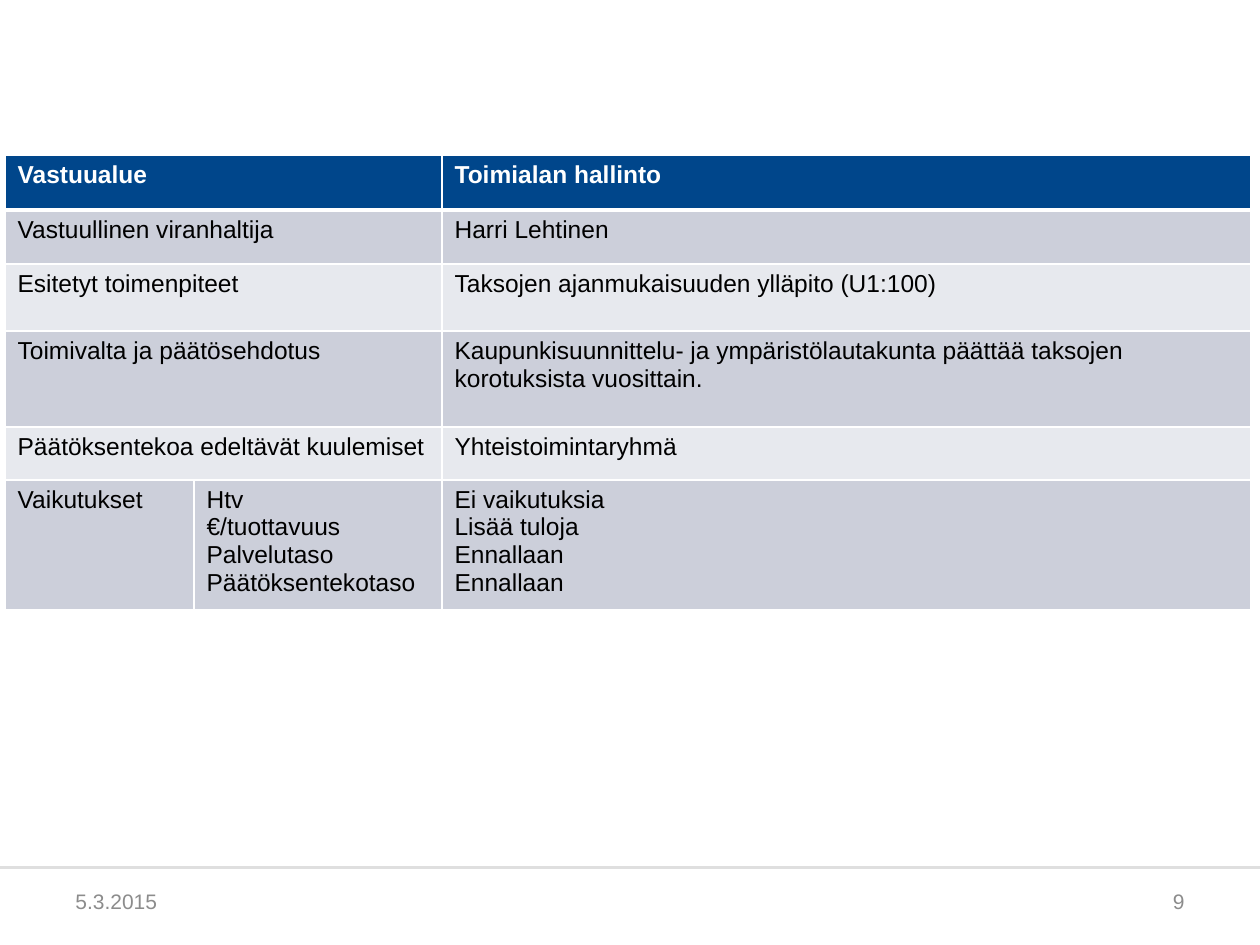
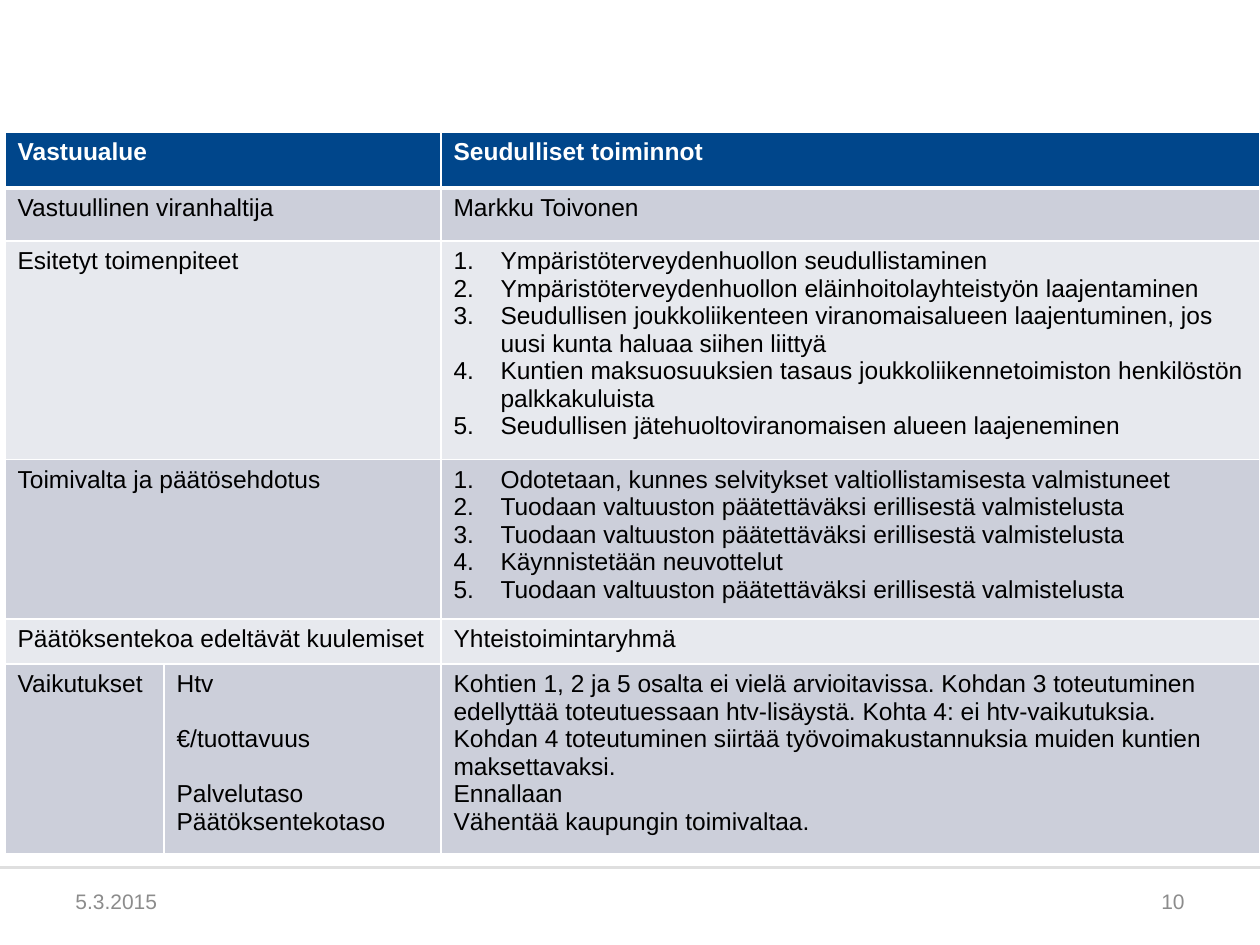
from lxml import etree
from pptx import Presentation
from pptx import util as u
from pptx.dml.color import RGBColor
from pptx.enum import shapes, text
from pptx.oxml import ns

PX = 914400 / 126
FONT = "Arial"
COLORS = {
    "header": "00468B",
    "odd": "CCCFDA",
    "even": "E7E9EE",
    "white": "FFFFFF",
    "black": "000000",
    "rule": "DFDFDF",
    "footer": "8C8C8C",
}
LABELS = [
    "Vastuualue",
    "Vastuullinen viranhaltija",
    "Esitetyt toimenpiteet",
    "Toimivalta ja päätösehdotus",
    "Päätöksentekoa edeltävät kuulemiset",
    "Vaikutukset",
]
EFFECTS = ["Htv", "€/tuottavuus", "Palvelutaso", "Päätöksentekotaso"]
SEPARATE = "Tuodaan valtuuston päätettäväksi erillisestä valmistelusta"
AREAS = [
    {
        "page": "9",
        "box": (5, 155),
        "cols": (189, 248, 809),
        "rows": (55, 54, 67, 96, 53, 122),
        "effect_gaps": (),
        "numbered": (),
        "content": [
            ["Toimialan hallinto"],
            ["Harri Lehtinen"],
            ["Taksojen ajanmukaisuuden ylläpito (U1:100)"],
            ["Kaupunkisuunnittelu- ja ympäristölautakunta päättää taksojen "
             "korotuksista vuosittain."],
            ["Yhteistoimintaryhmä"],
            ["Ei vaikutuksia", "Lisää tuloja", "Ennallaan", "Ennallaan"],
        ],
    },
    {
        "page": "10",
        "box": (5, 132),
        "cols": (159, 277, 819),
        "rows": (56, 53, 205, 151, 45, 177),
        "effect_gaps": (1, 2),
        "numbered": (2, 3),
        "content": [
            ["Seudulliset toiminnot"],
            ["Markku Toivonen"],
            ["Ympäristöterveydenhuollon seudullistaminen",
             "Ympäristöterveydenhuollon eläinhoitolayhteistyön laajentaminen",
             "Seudullisen joukkoliikenteen viranomaisalueen laajentuminen, "
             "jos uusi kunta haluaa siihen liittyä",
             "Kuntien maksuosuuksien tasaus joukkoliikennetoimiston "
             "henkilöstön palkkakuluista",
             "Seudullisen jätehuoltoviranomaisen alueen laajeneminen"],
            ["Odotetaan, kunnes selvitykset valtiollistamisesta valmistuneet",
             SEPARATE, SEPARATE, "Käynnistetään neuvottelut", SEPARATE],
            ["Yhteistoimintaryhmä"],
            ["Kohtien 1, 2 ja 5 osalta ei vielä arvioitavissa. Kohdan 3 "
             "toteutuminen edellyttää toteutuessaan htv-lisäystä. "
             "Kohta 4: ei htv-vaikutuksia.",
             "Kohdan 4 toteutuminen siirtää työvoimakustannuksia muiden "
             "kuntien maksettavaksi.",
             "Ennallaan",
             "Vähentää kaupungin toimivaltaa."],
        ],
    },
]


def px(n):
    return u.Emu(round(n * PX))


def rgb(name):
    return RGBColor.from_string(COLORS[name])


def style(p, size, color, bold=False):
    for r in p.runs:
        r.font.name = FONT
        r.font.size = u.Pt(size)
        r.font.bold = bold
        r.font.color.rgb = rgb(color)


def number(p):
    pPr = p._p.get_or_add_pPr()
    pPr.set("marL", str(px(47)))
    pPr.set("indent", str(-px(47)))
    etree.SubElement(pPr, ns.qn("a:buFont"), typeface="+mj-lt")
    etree.SubElement(pPr, ns.qn("a:buAutoNum"), type="arabicPeriod")


def border(cell, widths):
    tcPr = cell._tc.get_or_add_tcPr()
    for side, width in zip("LRTB", widths):
        ln = etree.SubElement(tcPr, ns.qn("a:ln" + side), w=str(u.Pt(width)))
        fill = etree.SubElement(ln, ns.qn("a:solidFill"))
        etree.SubElement(fill, ns.qn("a:srgbClr"), val=COLORS["white"])


def fill_cell(cell, lines, header, numbered=False, gaps=()):
    tf = cell.text_frame
    tf.text = "\n".join(lines)
    for i, p in enumerate(tf.paragraphs):
        if numbered:
            number(p)
        if i in gaps:
            p.space_before = u.Pt(15.7)
        style(p, 14, "white" if header else "black", header)


def area_table(s, area):
    x, y = area["box"]
    cols, rows = area["cols"], area["rows"]
    table = s.shapes.add_table(len(rows), len(cols), px(x), px(y),
                               px(sum(cols)), px(sum(rows))).table
    for column, width in zip(table.columns, cols):
        column.width = px(width)
    for i, height in enumerate(rows):
        table.rows[i].height = px(height)
        color = "header" if i == 0 else "odd" if i % 2 else "even"
        for j in range(len(cols)):
            cell = table.cell(i, j)
            border(cell, (1, 1, 3 if i == 1 else 1, 3 if i == 0 else 1))
            cell.fill.solid()
            cell.fill.fore_color.rgb = rgb(color)
        if i < len(rows) - 1:
            table.cell(i, 0).merge(table.cell(i, 1))
        else:
            fill_cell(table.cell(i, 1), EFFECTS, False,
                      gaps=area["effect_gaps"])
        fill_cell(table.cell(i, 0), [LABELS[i]], i == 0)
        fill_cell(table.cell(i, 2), area["content"][i], i == 0,
                  i in area["numbered"])


def footer_text(s, x, y, words, align):
    tf = s.shapes.add_textbox(px(x), px(y), px(294), px(50)).text_frame
    tf.word_wrap = True
    tf.vertical_anchor = text.MSO_ANCHOR.MIDDLE
    tf.text = words
    p = tf.paragraphs[0]
    p.alignment = align
    style(p, 12, "footer")


def footer(s, page, x=0, y=868, w=1260, h=77):
    band = s.shapes.add_shape(shapes.MSO_SHAPE.RECTANGLE,
                              px(x), px(y + 1), px(w), px(h - 1))
    band.shadow.inherit = False
    band.fill.solid()
    band.fill.fore_color.rgb = rgb("white")
    band.line.fill.background()
    rule = s.shapes.add_connector(shapes.MSO_CONNECTOR.STRAIGHT,
                                  px(x), px(y), px(x + w), px(y))
    rule.line.color.rgb = rgb("rule")
    rule.line.width = u.Pt(1.75)
    etree.SubElement(rule._element.spPr, ns.qn("a:effectLst"))
    footer_text(s, x + 63, y + 8, "5.3.2015", text.PP_ALIGN.LEFT)
    footer_text(s, x + w - 357, y + 8, page, text.PP_ALIGN.RIGHT)


def area_slide(prs, area):
    s = prs.slides.add_slide(prs.slide_layouts[6])
    footer(s, area["page"])
    area_table(s, area)


def main():
    prs = Presentation()
    prs.slide_width, prs.slide_height = px(1260), px(945)
    for area in AREAS:
        area_slide(prs, area)
    prs.save("out.pptx")


if __name__ == "__main__":
    main()
